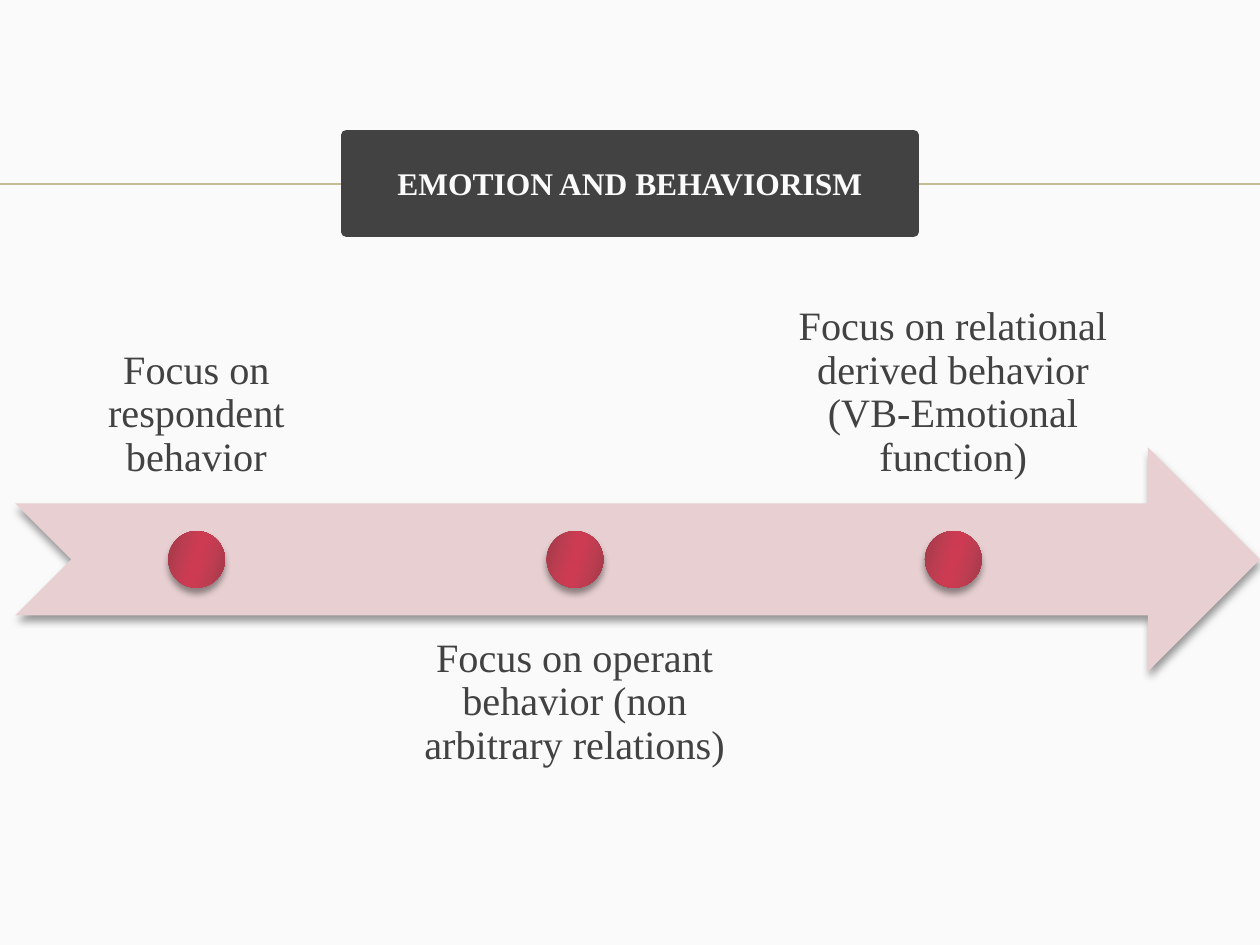
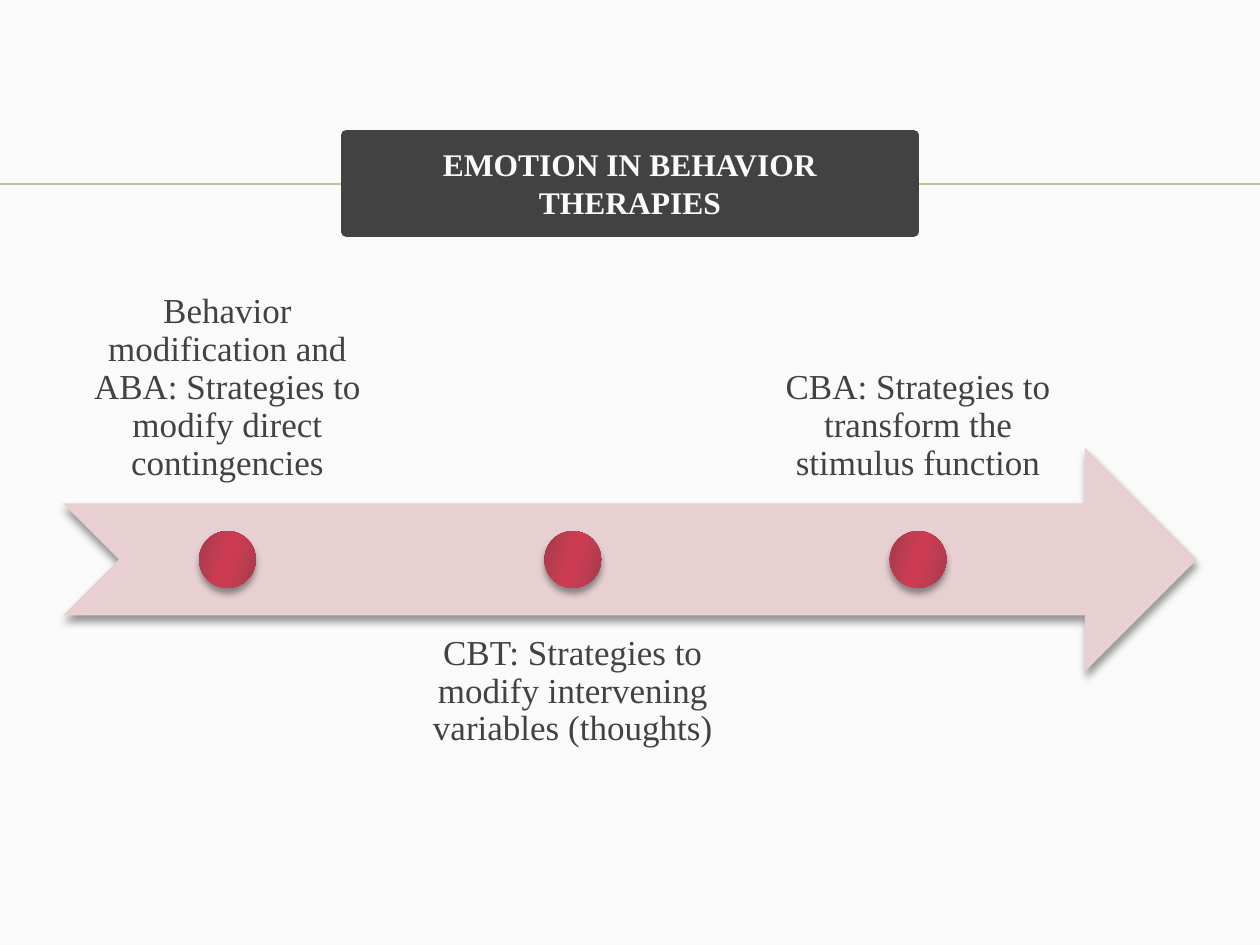
import pptx
import pptx.util
import pptx.dml.color
import pptx.enum.shapes
import pptx.enum.text
import pptx.oxml
import pptx.oxml.ns
import lxml.etree

Inches = pptx.util.Inches
Pt = pptx.util.Pt
qn = pptx.oxml.ns.qn
SHAPE = pptx.enum.shapes.MSO_SHAPE
ANCHOR = pptx.enum.text.MSO_ANCHOR

FONT = "Times New Roman"
BACKGROUND = "FAFAFA"
DARK = "424242"
TITLE_TEXT = "FBFBFB"
RULE = "C4BD97"
ARROW = "E8D0D2"
DOT_STOPS = [(0, "9F3949"), (30, "BF3D51"), (45, "CD3B52"),
             (55, "CD3B52"), (73, "BF3D51"), (100, "9F3949")]

RULE_TOP = 1.46
ARROW_TOP, ARROW_HEIGHT = 3.55, 1.78
DOT_SIZE = 0.45
LABEL_ABOVE, LABEL_BELOW, LABEL_HEIGHT = 2.21, 4.88, 1.78
STEP_RATIO = 1.05  # each label column plus a 5 % gap


def color(value):
    return pptx.dml.color.RGBColor.from_string(value)


def set_format(target, values):
    for name, value in values.items():
        setattr(target, name, value)


class TimelineDeck:
    """Holds the shared style and the current slide."""

    def __init__(self):
        self.presentation = pptx.Presentation()
        self.presentation.slide_width = Inches(10)
        self.presentation.slide_height = Inches(7.5)
        self.slide = None

    def new_slide(self):
        layout = self.presentation.slide_layouts[6]
        self.slide = self.presentation.slides.add_slide(layout)
        fill = self.slide.background.fill
        fill.solid()
        fill.fore_color.rgb = color(BACKGROUND)

    def rule(self):
        connector = self.slide.shapes.add_connector(
            pptx.enum.shapes.MSO_CONNECTOR.STRAIGHT,
            Inches(0), Inches(RULE_TOP), Inches(10), Inches(RULE_TOP))
        connector.line.color.rgb = color(RULE)
        connector.line.width = Pt(1)
        lxml.etree.SubElement(connector.element.spPr, qn("a:effectLst"))

    def shape(self, kind, left, top, width, height, fill=None):
        shape = self.slide.shapes.add_shape(
            kind, Inches(left), Inches(top), Inches(width), Inches(height))
        shape.shadow.inherit = False
        shape.line.fill.background()
        if fill:
            shape.fill.solid()
            shape.fill.fore_color.rgb = color(fill)
        return shape

    def drop_shadow(self, shape):
        effects = shape.element.spPr.find(qn("a:effectLst"))
        effects.append(pptx.oxml.parse_xml(
            f'<a:outerShdw {pptx.oxml.ns.nsdecls("a")} blurRad="{Pt(4)}" '
            f'dist="{Pt(3.3)}" dir="5400000" rotWithShape="0">'
            '<a:srgbClr val="000000"><a:alpha val="40000"/></a:srgbClr>'
            '</a:outerShdw>'))

    def text(self, shape, words, frame_format, paragraph_format, font_format,
             text_color):
        frame = shape.text_frame
        set_format(frame, {"word_wrap": True, **frame_format})
        paragraph = frame.paragraphs[0]
        set_format(paragraph, {"alignment": pptx.enum.text.PP_ALIGN.CENTER,
                               **paragraph_format})
        run = paragraph.add_run()
        run.text = words
        set_format(run.font, {"name": FONT, **font_format})
        run.font.color.rgb = color(text_color)

    def title(self, words):
        box = self.shape(SHAPE.RECTANGLE, 2.75, 1.07, 4.5, 0.77, DARK)
        box.line.color.rgb = color(DARK)
        box.line.width = Pt(6)
        self.text(box, words, {"vertical_anchor": ANCHOR.MIDDLE},
                  {"space_before": Pt(4)}, {"size": Pt(18), "bold": True},
                  TITLE_TEXT)

    def arrow(self, left, width):
        arrow = self.shape(SHAPE.NOTCHED_RIGHT_ARROW, left, ARROW_TOP, width,
                           ARROW_HEIGHT, ARROW)
        self.drop_shadow(arrow)

    def dot(self, center):
        top = ARROW_TOP + (ARROW_HEIGHT - DOT_SIZE) / 2
        dot = self.shape(SHAPE.OVAL, center - DOT_SIZE / 2, top,
                         DOT_SIZE, DOT_SIZE)
        dot.fill.gradient()
        dot.fill.gradient_angle = 360 - 16  # counter-clockwise
        stops = dot.element.spPr.find(qn("a:gradFill")).find(qn("a:gsLst"))
        for stop in list(stops):
            stops.remove(stop)
        for position, value in DOT_STOPS:
            stop = lxml.etree.SubElement(stops, qn("a:gs"),
                                         pos=str(position * 1000))
            lxml.etree.SubElement(stop, qn("a:srgbClr"), val=value)
        self.drop_shadow(dot)

    def label(self, words, left, width, above, size, inset):
        box = self.slide.shapes.add_textbox(
            Inches(left), Inches(LABEL_ABOVE if above else LABEL_BELOW),
            Inches(width), Inches(LABEL_HEIGHT))
        frame_format = {f"margin_{side}": Inches(inset)
                        for side in ("left", "top", "right", "bottom")}
        frame_format["vertical_anchor"] = (
            ANCHOR.BOTTOM if above else ANCHOR.TOP)
        self.text(box, words, frame_format, {"line_spacing": 0.9},
                  {"size": Pt(size)}, DARK)

    def timeline(self, title, arrow, first_left, label_width, size, inset,
                 labels):
        self.new_slide()
        self.rule()
        self.arrow(*arrow)
        # Labels alternate above and below the arrow
        for index, words in enumerate(labels):
            left = first_left + index * label_width * STEP_RATIO
            self.label(words, left, label_width, index % 2 == 0, size, inset)
            self.dot(left + label_width / 2)
        self.title(title)


def main():
    deck = TimelineDeck()

    # Slide 1: history of emotion in behaviorism
    deck.timeline(
        "EMOTION AND BEHAVIORISM", arrow=(0.12, 9.88), first_left=0.13,
        label_width=2.86, size=23, inset=0.18,
        labels=["Focus on respondent behavior",
                "Focus on operant behavior (non arbitrary relations)",
                "Focus on relational derived behavior "
                "(VB-Emotional function)"])

    # Slide 2: strategies of the therapies
    deck.timeline(
        "EMOTION IN BEHAVIOR THERAPIES", arrow=(0.5, 9), first_left=0.5,
        label_width=2.61, size=20, inset=0.16,
        labels=["Behavior modification and ABA: Strategies to modify "
                "direct contingencies",
                "CBT: Strategies to modify intervening variables (thoughts)",
                "CBA: Strategies to transform the stimulus function"])

    deck.presentation.save("out.pptx")


if __name__ == "__main__":
    main()
